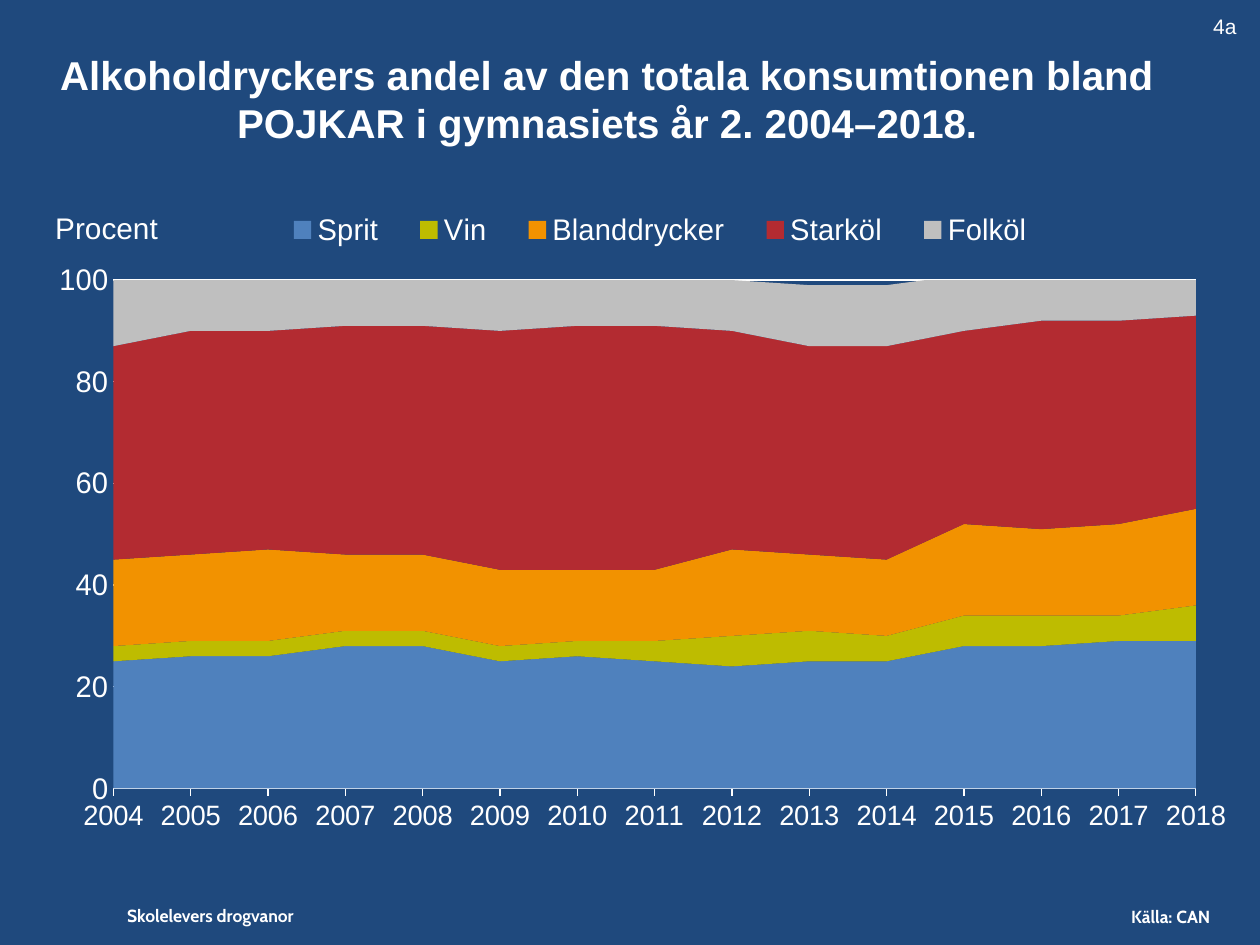
from lxml import etree
from pptx import Presentation
from pptx.chart.data import CategoryChartData
from pptx.dml.color import RGBColor
from pptx.enum.chart import XL_CHART_TYPE, XL_LEGEND_POSITION, XL_TICK_MARK
from pptx.enum.text import MSO_ANCHOR, PP_ALIGN
from pptx.oxml.ns import qn
from pptx.util import Inches, Pt

AREA_STACKED = XL_CHART_TYPE.AREA_STACKED
LEGEND_BOTTOM = XL_LEGEND_POSITION.BOTTOM
TICK_NONE, TICK_OUT = XL_TICK_MARK.NONE, XL_TICK_MARK.OUTSIDE
TOP, MIDDLE = MSO_ANCHOR.TOP, MSO_ANCHOR.MIDDLE
LEFT, CENTER = PP_ALIGN.LEFT, PP_ALIGN.CENTER

COLORS = {
    "background": "1F497D",
    "text": "FFFFFF",
    "Sprit": "4F81BD",
    "Vin": "BEBC00",
    "Blanddrycker": "F29200",
    "Starköl": "B32B31",
    "Folköl": "BFBFBF",
}
YEARS = [str(year) for year in range(2004, 2019)]
SHARES = {
    "Sprit": [25, 26, 26, 28, 28, 25, 26, 25, 24, 25, 25, 28, 28, 29, 29],
    "Vin": [3, 3, 3, 3, 3, 3, 3, 4, 6, 6, 5, 6, 6, 5, 7],
    "Blanddrycker": [17, 17, 18, 15, 15, 15, 14, 14, 17, 15, 15, 18, 17, 18, 19],
    "Starköl": [42, 44, 43, 45, 45, 47, 48, 48, 43, 41, 42, 38, 41, 40, 38],
    "Folköl": [13, 11, 11, 10, 9, 10, 10, 10, 10, 12, 12, 11, 8, 8, 8],
}


def color(name):
    return RGBColor.from_string(COLORS[name])


def set_font(font, size, name="Arial", bold=False):
    font.size = Pt(size)
    font.name = name
    font.bold = bold
    font.color.rgb = color("text")


def add_text(page, box, text, size, name="Arial", bold=False,
             align=LEFT, anchor=TOP, wrap=True, indent=0.1):
    frame = page.shapes.add_textbox(*map(Inches, box)).text_frame
    frame.word_wrap = wrap
    frame.vertical_anchor = anchor
    frame.margin_left = Inches(indent)
    para = frame.paragraphs[0]
    para.text = text
    para.alignment = align
    set_font(para.font, size, name, bold)


def make_layout(fractions, inner=False):
    layout = etree.Element(qn("c:layout"))
    manual = etree.SubElement(layout, qn("c:manualLayout"))
    settings = [("layoutTarget", "inner")] if inner else []
    settings += [("xMode", "edge"), ("yMode", "edge")]
    settings += zip("xywh", map(str, fractions))
    for tag, value in settings:
        etree.SubElement(manual, qn(f"c:{tag}")).set("val", value)
    return layout


def style_axis(axis, size, tick):
    set_font(axis.tick_labels.font, size)
    axis.major_tick_mark = tick
    axis.minor_tick_mark = TICK_NONE


def style_line(line):
    line.color.rgb = color("text")
    line.width = Pt(0.75)


def add_share_chart(page, box):
    data = CategoryChartData(number_format="0")
    data.categories = YEARS
    for drink, values in SHARES.items():
        data.add_series(drink, values)
    chart = page.shapes.add_chart(AREA_STACKED, *map(Inches, box), data).chart
    chart.has_title = False
    set_font(chart.font, 10, "Calibri")
    for series in chart.plots[0].series:
        series.format.fill.solid()
        series.format.fill.fore_color.rgb = color(series.name)
        series.format.line.fill.background()

    years = chart.category_axis
    style_axis(years, 16, TICK_OUT)
    years.has_major_gridlines = False
    style_line(years.format.line)

    percent = chart.value_axis
    style_axis(percent, 17, TICK_NONE)
    percent.minimum_scale = 0
    percent.maximum_scale = 100
    percent.major_unit = 20
    percent.tick_labels.number_format = "0"
    percent.tick_labels.number_format_is_linked = False
    percent.format.line.fill.background()
    percent.has_major_gridlines = True
    style_line(percent.major_gridlines.format.line)

    chart.has_legend = True
    legend = chart.legend
    legend.position = LEGEND_BOTTOM
    legend.include_in_layout = False
    set_font(legend.font, 17)

    root = chart.element
    for cross in root.iter(qn("c:crossBetween")):
        cross.set("val", "midCat")
    plot_area = root.find(".//" + qn("c:plotArea"))
    for part in (plot_area, root.find(".//" + qn("c:legend"))):
        for layout in part.findall(qn("c:layout")):
            part.remove(layout)
    plot_area.insert(0, make_layout((0.04, 0.14, 0.95, 0.76), inner=True))
    root.find(".//" + qn("c:legendPos")).addnext(
        make_layout((0.17, 0.02, 0.7, 0.09)))


def add_header(page):
    add_text(page, (0.23, 0.31, 9.19, 0.94),
             "Alkoholdryckers andel av den totala konsumtionen bland "
             "POJKAR i gymnasiets år 2. 2004–2018.",
             23, bold=True, align=CENTER, anchor=MIDDLE)
    add_text(page, (9.53, 0.06, 0.43, 0.3), "4a", 12)


def add_footer(page):
    add_text(page, (0.76, 7.13, 1.82, 0.27), "Skolelevers drogvanor", 10,
             "Cabin", bold=True, wrap=False, indent=0.25)
    add_text(page, (8.88, 7.14, 0.94, 0.27), "Källa: CAN", 10,
             "Cabin", bold=True)


def main():
    deck = Presentation()
    deck.slide_width, deck.slide_height = Inches(10), Inches(7.5)
    page = deck.slides.add_slide(deck.slide_layouts[6])
    page.background.fill.solid()
    page.background.fill.fore_color.rgb = color("background")
    add_footer(page)
    add_header(page)
    add_share_chart(page, (0.47, 1.48, 9.26, 5.31))
    add_text(page, (0.34, 1.61, 1.04, 0.39), "Procent", 17, anchor=MIDDLE)
    deck.save("out.pptx")


if __name__ == "__main__":
    main()
